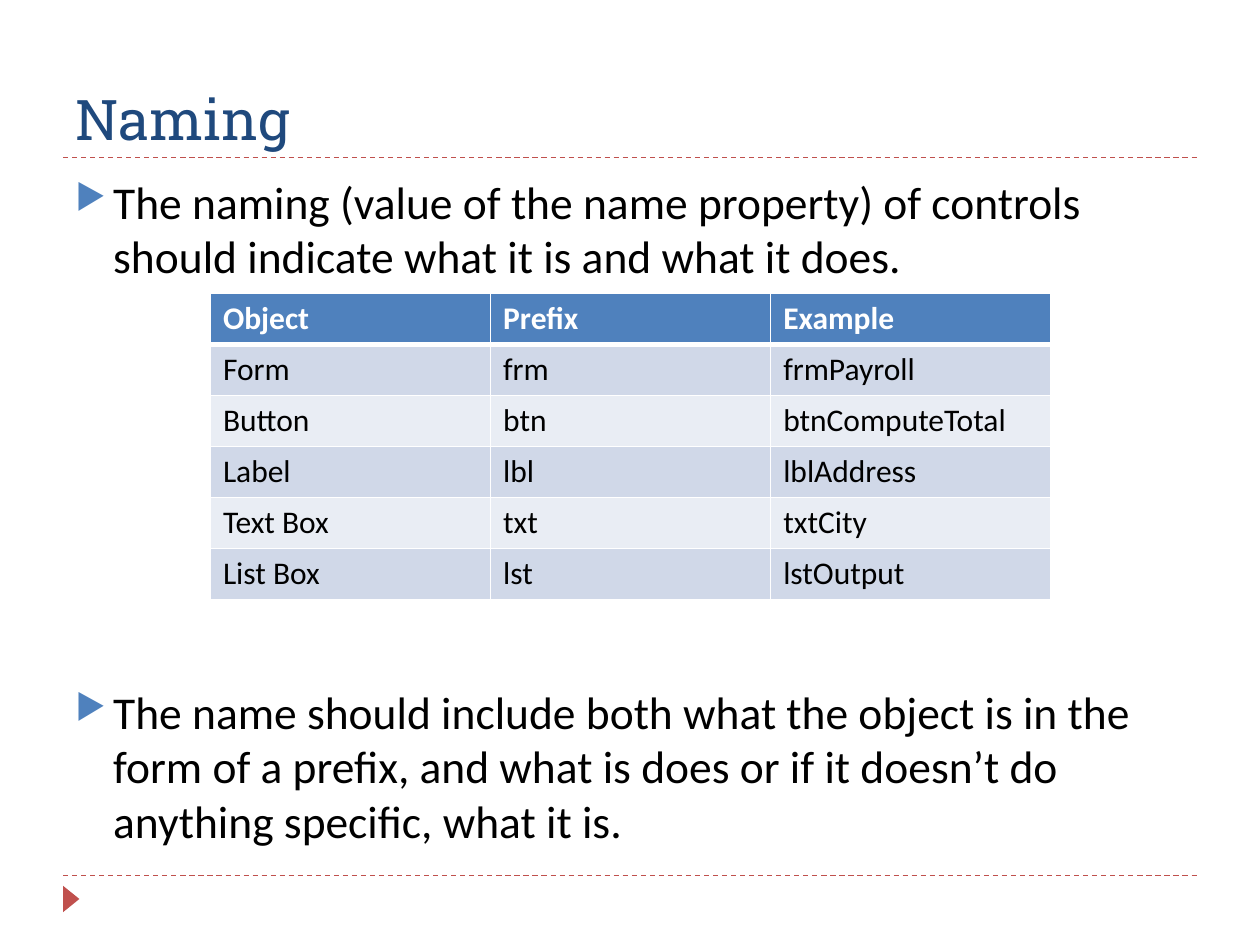
import pptx
import pptx.dml.color
import pptx.enum.dml
import pptx.enum.shapes
import pptx.enum.text
import pptx.oxml
import pptx.oxml.ns
import pptx.util
from pptx.util import Inches

RGBColor = pptx.dml.color.RGBColor
WHITE = RGBColor(0xFF, 0xFF, 0xFF)
BLACK = RGBColor(0x00, 0x00, 0x00)
NAVY = RGBColor(0x1F, 0x49, 0x7D)
BLUE = RGBColor(0x4F, 0x81, 0xBD)
RED = RGBColor(0xC0, 0x50, 0x4D)
BAND_DARK = RGBColor(0xD0, 0xD8, 0xE8)
BAND_LIGHT = RGBColor(0xE9, 0xED, 0xF4)
NAMESPACE = pptx.oxml.ns.nsdecls("a")


def add_text(paragraph, text, color, **font_format):
    run = paragraph.add_run()
    run.text = text
    run.font.color.rgb = color
    for attribute, value in font_format.items():
        setattr(run.font, attribute, value)


def append_xml(parent, *elements):
    """Append DrawingML elements, given as (tag, attributes and content)."""
    for tag, content in elements:
        parent.append(pptx.oxml.parse_xml(f"<a:{tag} {NAMESPACE} {content}</a:{tag}>"))


presentation = pptx.Presentation()
presentation.slide_width = Inches(10)
presentation.slide_height = Inches(7.5)
slide = presentation.slides.add_slide(presentation.slide_layouts[6])

# Dashed rules and the footer marker
for rule_y in (6.95, 1.25):
    rule = slide.shapes.add_connector(
        pptx.enum.shapes.MSO_CONNECTOR.STRAIGHT,
        Inches(0.5), Inches(rule_y), Inches(9.5), Inches(rule_y))
    rule.line.color.rgb = RED
    rule.line.width = pptx.util.Pt(0.75)
    rule.line.dash_style = pptx.enum.dml.MSO_LINE.DASH
    append_xml(rule._element.spPr, ("effectLst", ">"))

marker = slide.shapes.add_shape(
    pptx.enum.shapes.MSO_SHAPE.ISOSCELES_TRIANGLE,
    Inches(0.46), Inches(7.07), Inches(0.21), Inches(0.13))
marker.rotation = 90
marker.shadow.inherit = False
marker.fill.solid()
marker.fill.fore_color.rgb = RED
marker.line.fill.background()

# Title
title = slide.shapes.add_textbox(Inches(0.5), Inches(0.17), Inches(9), Inches(1.08)).text_frame
title.word_wrap = True
title.vertical_anchor = pptx.enum.text.MSO_ANCHOR.BOTTOM
add_text(title.paragraphs[0], "Naming", NAVY, name="Roboto Slab", size=pptx.util.Pt(32))

# Guidelines, with room for the table between them
guidelines = [
    ("The naming (value of the name property) of controls should indicate "
     "what it is and what it does.", 6),
    ("The name should include both what the object is in the form of a prefix, "
     "and what is does or if it doesn’t do anything specific, what it is.", 229),
]
body = slide.shapes.add_textbox(Inches(0.5), Inches(1.33), Inches(9), Inches(5.4)).text_frame
body.word_wrap = True
for index, (guideline, space_before) in enumerate(guidelines):
    paragraph = body.add_paragraph() if index else body.paragraphs[0]
    paragraph.space_before = pptx.util.Pt(space_before)
    add_text(paragraph, guideline, BLACK, name="Calibri", size=pptx.util.Pt(26))
    properties = paragraph._p.get_or_add_pPr()
    properties.set("marL", str(Inches(0.3)))
    properties.set("indent", str(Inches(-0.3)))
    append_xml(properties,
               ("buClr", f'><a:srgbClr val="{BLUE}"/>'),
               ("buSzPct", 'val="76000">'),
               ("buChar", 'char="▶">'))

# Prefix table
prefix_rows = [
    ("Object", "Prefix", "Example"),
    ("Form", "frm", "frmPayroll"),
    ("Button", "btn", "btnComputeTotal"),
    ("Label", "lbl", "lblAddress"),
    ("Text Box", "txt", "txtCity"),
    ("List Box", "lst", "lstOutput"),
]
prefix_table = slide.shapes.add_table(
    len(prefix_rows), 3, Inches(1.67), Inches(2.33), Inches(6.67), Inches(2.43)).table
for row_index, row_texts in enumerate(prefix_rows):
    is_header = row_index == 0
    if is_header:
        row_fill = BLUE
    else:
        row_fill = BAND_DARK if row_index % 2 else BAND_LIGHT
    border_widths = {"lnL": 1, "lnR": 1,
                     "lnT": 3 if row_index == 1 else 1,
                     "lnB": 3 if is_header else 1}
    for column_index, cell_text in enumerate(row_texts):
        cell = prefix_table.cell(row_index, column_index)
        add_text(cell.text_frame.paragraphs[0], cell_text, WHITE if is_header else BLACK,
                 name="Calibri", size=pptx.util.Pt(18), bold=is_header)
        for side, width in border_widths.items():
            append_xml(cell._tc.get_or_add_tcPr(),
                       (side, f'w="{pptx.util.Pt(width)}"><a:solidFill>'
                              f'<a:srgbClr val="{WHITE}"/></a:solidFill>'))
        cell.fill.solid()
        cell.fill.fore_color.rgb = row_fill

presentation.save("out.pptx")
